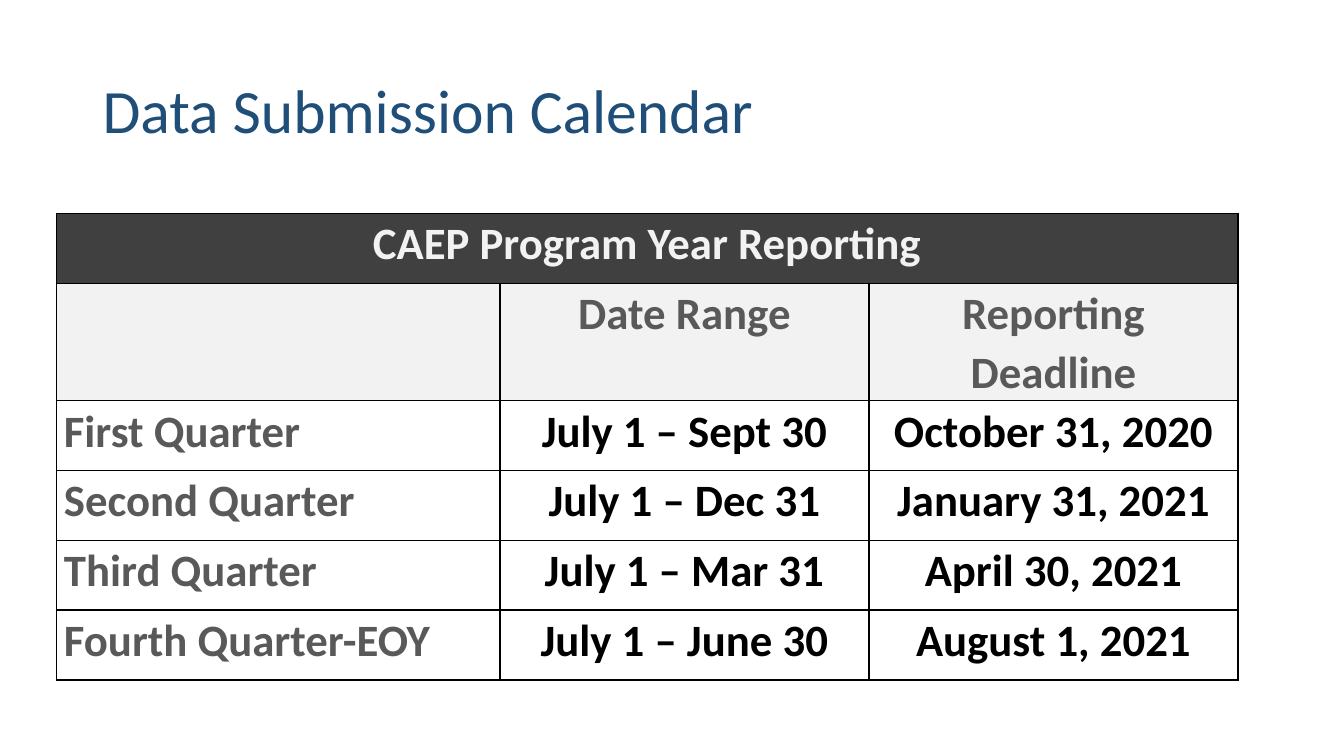
from lxml.etree import SubElement as Sub
from pptx import Presentation
from pptx.dml.color import RGBColor as Rgb
from pptx.enum.text import MSO_ANCHOR as Anchor, PP_ALIGN as Align
from pptx.oxml.ns import qn
from pptx.util import Cm, Pt

HUES = {"title": "1F4E79", "dark": "404040", "pale": "F2F2F2",
        "grey": "595959", "black": "000000", "white": "FFFFFF"}
HEAD = "CAEP Program Year Reporting"
ROWS = [
    ("", "Date Range", "Reporting Deadline"),
    ("First Quarter", "July 1 – Sept 30", "October 31, 2020"),
    ("Second Quarter", "July 1 – Dec 31", "January 31, 2021"),
    ("Third Quarter", "July 1 – Mar 31", "April 30, 2021"),
    ("Fourth Quarter-EOY", "July 1 – June 30", "August 1, 2021"),
]


def write(frame, text, size=32, hue="black", bold=True, align=Align.CENTER, lead=1.07):
    """Put one formatted paragraph into a text frame."""
    para = frame.paragraphs[0]
    para.alignment, para.line_spacing = align, lead
    run = para.add_run()
    run.text = text
    font = run.font
    font.name, font.size, font.bold = "Calibri", Pt(size), bold
    font.color.rgb = Rgb.from_string(HUES[hue])


def edge(cell):
    """Draw a thin black line on all four sides of a cell."""
    props = cell._tc.get_or_add_tcPr()
    for side in "LRTB":
        line = Sub(props, qn(f"a:ln{side}"), w=str(Pt(1)))
        Sub(Sub(line, qn("a:solidFill")), qn("a:srgbClr"), val=HUES["black"])


def paint(cell, hue):
    """Give a cell its margins, borders and fill."""
    cell.margin_left = cell.margin_right = Cm(0.19)
    cell.margin_top = cell.margin_bottom = 0
    edge(cell)
    cell.fill.solid()
    cell.fill.fore_color.rgb = Rgb.from_string(HUES[hue])


def add_title(slide, text):
    """Place and fill the title."""
    title = slide.shapes.title
    title.left, title.top = Cm(2.33), Cm(1.01)
    title.width, title.height = Cm(29.21), Cm(3.68)
    title.text_frame.vertical_anchor = Anchor.MIDDLE
    write(title.text_frame, text, size=44, hue="title", bold=False,
          align=Align.LEFT, lead=0.9)


def add_grid(slide):
    """Build the calendar table."""
    wide, high = [Cm(11.18), Cm(9.3), Cm(9.3)], Cm(1.76)
    count = len(ROWS) + 1
    grid = slide.shapes.add_table(count, len(wide), Cm(1.42), Cm(5.38),
                                  sum(wide), high * count).table
    grid.first_row = grid.horz_banding = False
    for col, width in zip(grid.columns, wide):
        col.width = width
    for row in grid.rows:
        row.height = high
    for cell in grid.rows[0].cells:
        paint(cell, "dark")
    top = grid.cell(0, 0)
    top.merge(grid.cell(0, 2))
    write(top.text_frame, HEAD, hue="pale")
    for r, texts in enumerate(ROWS, 1):
        for c, text in enumerate(texts):
            cell = grid.cell(r, c)
            paint(cell, "pale" if r == 1 else "white")
            if text:
                write(cell.text_frame, text,
                      hue="grey" if r == 1 or c == 0 else "black",
                      align=Align.CENTER if c else Align.LEFT)


def main():
    """Make the slide and save it."""
    deck = Presentation()
    deck.slide_width, deck.slide_height = Cm(33.87), Cm(19.05)
    slide = deck.slides.add_slide(deck.slide_layouts[5])
    add_title(slide, "Data Submission Calendar")
    add_grid(slide)
    deck.save("out.pptx")


if __name__ == "__main__":
    main()
